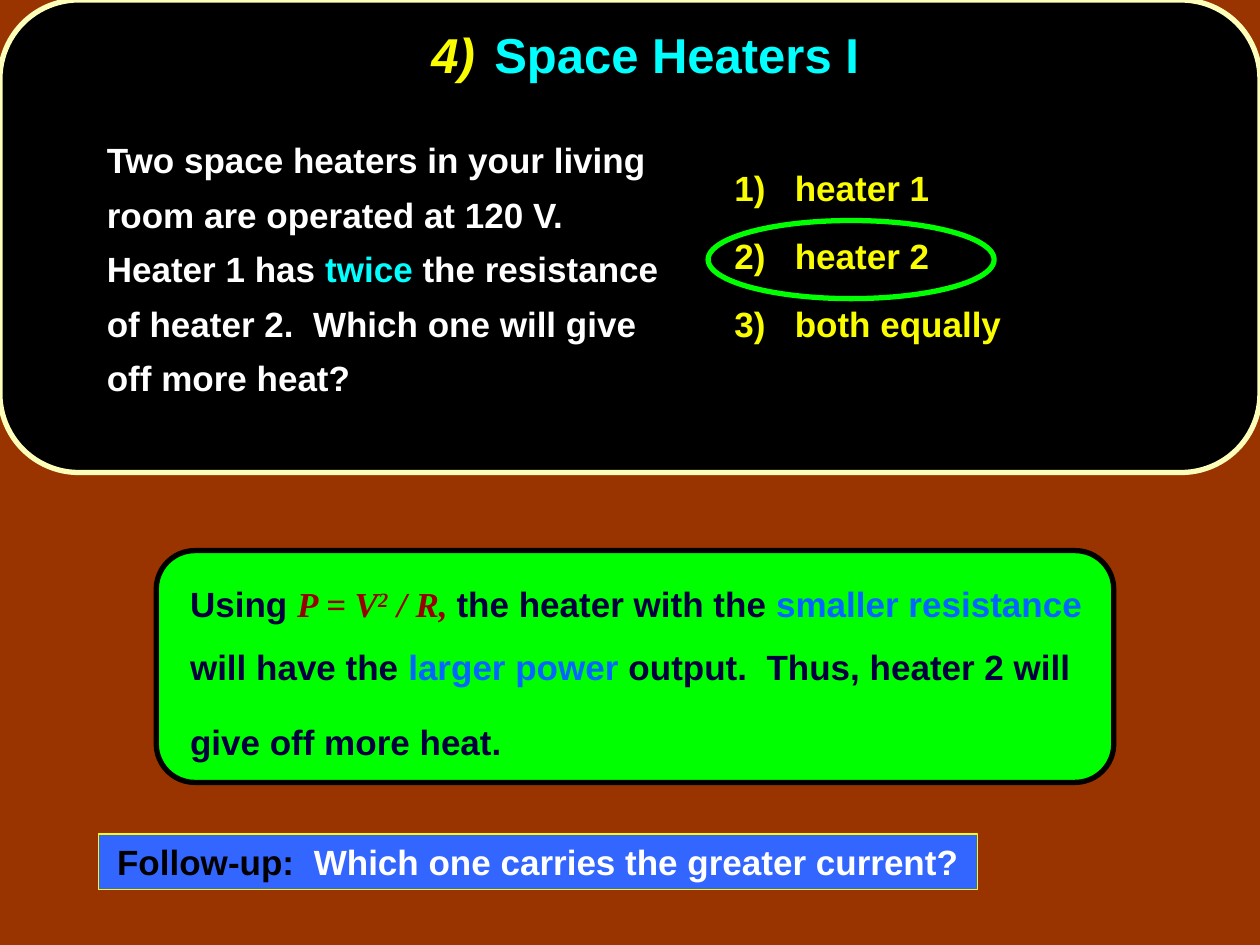
from dataclasses import dataclass

from lxml.etree import SubElement
from pptx import Presentation
from pptx.dml.color import RGBColor
from pptx.enum.shapes import MSO_SHAPE as Preset
from pptx.enum.text import MSO_ANCHOR as Anchor, PP_ALIGN as Align
from pptx.oxml.ns import qn
from pptx.util import Inches, Pt


@dataclass(frozen=True)
class Theme:
    background: str = "993300"
    panel: str = "000000"
    panel_edge: str = "FCFEB9"
    yellow: str = "FAFD00"
    cyan: str = "00FFFF"
    white: str = "FFFFFF"
    green: str = "00FF00"
    black: str = "000000"
    navy: str = "000040"
    blue: str = "0066FF"
    red: str = "990000"
    banner: str = "3366FF"
    font: str = "Arial"
    formula_font: str = "Times New Roman"
    title_size: int = 28
    body_size: int = 20
    tail_size: int = 24


THEME = Theme()


def color(value):
    return RGBColor.from_string(value)


def add_panel(slide, preset, box, fill=None, line=None, width=3):
    shape = slide.shapes.add_shape(preset, *map(Inches, box))
    shape.shadow.inherit = False
    if fill:
        shape.fill.solid()
        shape.fill.fore_color.rgb = color(fill)
    else:
        shape.fill.background()
    shape.line.color.rgb = color(line)
    shape.line.width = Pt(width)
    return shape


def add_text_box(slide, box):
    shape = slide.shapes.add_textbox(*map(Inches, box))
    shape.text_frame.word_wrap = True
    return shape.text_frame


def write(paragraph, text, fill, size=THEME.body_size, font=THEME.font,
          italic=False, superscript=False):
    run = paragraph.add_run()
    run.text = text
    run.font.name = font
    run.font.size = Pt(size)
    run.font.bold = True
    run.font.italic = italic
    run.font.color.rgb = color(fill)
    if superscript:
        run.font._element.set("baseline", "30000")


def format_paragraph(paragraph, line_spacing, left, hanging=0):
    """Set the indents, with space before of half a line."""
    paragraph.line_spacing = line_spacing
    paragraph.space_before = Pt(0)
    properties = paragraph._p.get_or_add_pPr()
    properties.set("marL", str(Inches(left)))
    properties.set("indent", str(-Inches(hanging)))
    space_before = properties.find(qn("a:spcBef"))
    space_before.remove(space_before[0])
    SubElement(space_before, qn("a:spcPct")).set("val", "50000")


def place_title(slide, box):
    title = slide.shapes.title
    slide.shapes._spTree.append(title._element)  # in front of the panel
    title.left, title.top, title.width, title.height = map(Inches, box)
    title.text_frame.vertical_anchor = Anchor.MIDDLE
    paragraph = title.text_frame.paragraphs[0]
    paragraph.alignment = Align.CENTER
    paragraph.line_spacing = 0.9
    write(paragraph, "4)\t", THEME.yellow, size=THEME.title_size, italic=True)
    write(paragraph, "Space Heaters I", THEME.cyan, size=THEME.title_size)


def add_question(slide, box):
    paragraph = add_text_box(slide, box).paragraphs[0]
    format_paragraph(paragraph, 1.3, left=0.44)
    write(paragraph, "Two space heaters in your living room are operated "
          "at 120 V.  Heater 1 has ", THEME.white)
    write(paragraph, "twice", THEME.cyan)
    write(paragraph, " the resistance of heater 2.  Which one will give "
          "off more heat?", THEME.white)


def add_answers(slide, box, answers):
    """List the answers and ring the second one."""
    left, top, _, _ = box
    add_panel(slide, Preset.OVAL, (left - 0.11, top + 0.54, 2.27, 0.62),
              line=THEME.green)
    frame = add_text_box(slide, box)
    for number, answer in enumerate(answers, 1):
        paragraph = frame.paragraphs[0] if number == 1 else frame.add_paragraph()
        format_paragraph(paragraph, 1.2, left=0.48, hanging=0.48)
        write(paragraph, f"{number})\t{answer}", THEME.yellow)


def add_problem(slide, box):
    left, top, _, _ = box
    add_panel(slide, Preset.ROUNDED_RECTANGLE, box, THEME.panel, THEME.panel_edge)
    place_title(slide, (left + 0.72, top, 8.8, 0.92))
    add_question(slide, (left + 0.31, top + 0.95, 5.13, 2.62))
    add_answers(slide, (left + 5.73, top + 1.21, 4.03, 1.63),
                ("heater 1", "heater 2", "both equally"))


def add_explanation(slide, box):
    left, top, _, _ = box
    add_panel(slide, Preset.ROUNDED_RECTANGLE, box, THEME.green, THEME.black)
    frame = add_text_box(slide, (left - 0.14, top + 0.04, 7.72, 1.7))
    paragraph = frame.paragraphs[0]
    format_paragraph(paragraph, 1.5, left=0.31)
    formula = {"font": THEME.formula_font, "italic": True}
    write(paragraph, "Using ", THEME.navy)
    write(paragraph, "P = V", THEME.red, **formula)
    write(paragraph, "2", THEME.red, superscript=True, **formula)
    write(paragraph, " / R, ", THEME.red, **formula)
    write(paragraph, "the heater with the ", THEME.navy)
    write(paragraph, "smaller resistance", THEME.blue)
    write(paragraph, " will have the ", THEME.navy)
    write(paragraph, "larger power", THEME.blue)
    write(paragraph, " output.  Thus, heater 2 will give off more heat.", THEME.navy)
    write(paragraph, " ", THEME.navy, size=THEME.tail_size)


def add_follow_up(slide, box):
    banner = add_panel(slide, Preset.RECTANGLE, box, THEME.banner,
                       THEME.yellow, width=0.75)
    banner.text_frame.vertical_anchor = Anchor.MIDDLE
    paragraph = banner.text_frame.paragraphs[0]
    paragraph.alignment = Align.CENTER
    write(paragraph, "Follow-up:", THEME.black)
    write(paragraph, "  Which one carries the greater current?", THEME.white)


def main():
    presentation = Presentation()
    presentation.slide_width = Inches(10)
    presentation.slide_height = Inches(7.5)
    slide = presentation.slides.add_slide(presentation.slide_layouts[5])
    slide.background.fill.solid()
    slide.background.fill.fore_color.rgb = color(THEME.background)
    add_explanation(slide, (1.24, 4.37, 7.6, 1.84))
    add_problem(slide, (0, 0, 10, 3.75))
    add_follow_up(slide, (0.78, 6.62, 6.98, 0.44))
    presentation.save("out.pptx")


if __name__ == "__main__":
    main()
